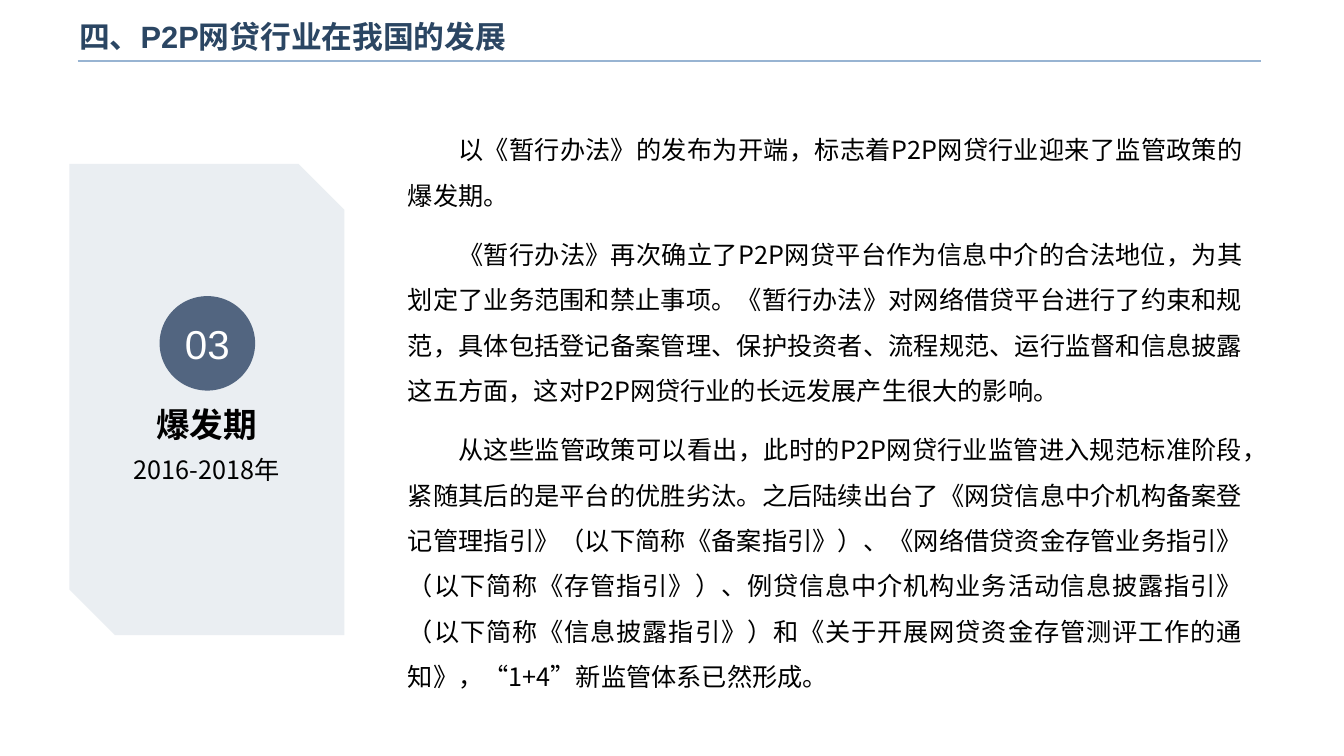
"""Build the slide on the boom period of P2P lending rules."""
from lxml.etree import SubElement
from pptx import Presentation
from pptx.dml.color import RGBColor
from pptx.enum.shapes import MSO_CONNECTOR, MSO_SHAPE
from pptx.enum.text import MSO_ANCHOR, PP_ALIGN
from pptx.oxml.ns import qn
from pptx.util import Pt

PX = 9525
NAVY = RGBColor(0x2B, 0x46, 0x63)
RULE = RGBColor(0x98, 0xB4, 0xD2)
PALE = RGBColor(0xEA, 0xEE, 0xF2)
SLATE = RGBColor(0x52, 0x65, 0x80)
BLACK = RGBColor(0, 0, 0)
WHITE = RGBColor(255, 255, 255)
LATIN = "Arial"
HAN = "Noto Sans CJK SC"

BODY = [
    "以《暂行办法》的发布为开端，标志着P2P网贷行业迎来了监管政策的爆发期。",
    "《暂行办法》再次确立了P2P网贷平台作为信息中介的合法地位，为其划定了业务范围和禁止事项。"
    "《暂行办法》对网络借贷平台进行了约束和规范，具体包括登记备案管理、保护投资者、流程规范、"
    "运行监督和信息披露这五方面，这对P2P网贷行业的长远发展产生很大的影响。",
    "从这些监管政策可以看出，此时的P2P网贷行业监管进入规范标准阶段，紧随其后的是平台的优胜劣汰。"
    "之后陆续出台了《网贷信息中介机构备案登记管理指引》（以下简称《备案指引》）、"
    "《网络借贷资金存管业务指引》（以下简称《存管指引》）、"
    "例贷信息中介机构业务活动信息披露指引》（以下简称《信息披露指引》）"
    "和《关于开展网贷资金存管测评工作的通知》，“1+4”新监管体系已然形成。",
]


def write(frame, *texts, size=18, font=HAN, color=BLACK, bold=False,
          align=PP_ALIGN.CENTER, anchor=MSO_ANCHOR.TOP, indent=0, line=None, after=0):
    frame.word_wrap = True
    frame.vertical_anchor = anchor
    for i, text in enumerate(texts):
        para = frame.paragraphs[0] if i == 0 else frame.add_paragraph()
        para.alignment = align
        para.line_spacing = line
        para.space_after = Pt(after)
        para._p.get_or_add_pPr().set("indent", str(indent * PX))
        run = para.add_run()
        run.text = text
        run.font.size = Pt(size)
        run.font.bold = bold
        run.font.name = font
        run.font.color.rgb = color
        SubElement(run._r.get_or_add_rPr(), qn("a:ea"), typeface=HAN)


def label(slide, box, *texts, **form):
    area = slide.shapes.add_textbox(*(n * PX for n in box))
    write(area.text_frame, *texts, **form)


def shape(slide, kind, box, fill):
    item = slide.shapes.add_shape(kind, *(n * PX for n in box))
    item.shadow.inherit = False
    item.fill.solid()
    item.fill.fore_color.rgb = fill
    item.line.fill.background()
    return item


def rule(slide, *ends):
    line = slide.shapes.add_connector(MSO_CONNECTOR.STRAIGHT, *(n * PX for n in ends))
    line.line.color.rgb = RULE
    line.line.width = Pt(1)
    SubElement(line._element.spPr, qn("a:effectLst"))


def main():
    deck = Presentation()
    deck.slide_width = 1280 * PX
    deck.slide_height = 720 * PX
    slide = deck.slides.add_slide(deck.slide_layouts[6])
    rule(slide, 74, 58, 1201, 58)
    label(slide, (66, 9, 1028, 51), "四、P2P网贷行业在我国的发展", size=22, font=LATIN,
          color=NAVY, bold=True, align=PP_ALIGN.LEFT, anchor=MSO_ANCHOR.MIDDLE)
    shape(slide, MSO_SHAPE.SNIP_2_DIAG_RECTANGLE, (66, 156, 262, 449), PALE)
    label(slide, (44, 380, 306, 48), "爆发期", size=24, bold=True)
    label(slide, (379, 109, 814, 560), *BODY, align=PP_ALIGN.JUSTIFY,
          indent=48, line=1.5, after=10)
    badge = shape(slide, MSO_SHAPE.OVAL, (152, 282, 91, 90), SLATE)
    write(badge.text_frame, "03", size=28.8, font=LATIN, color=WHITE, anchor=MSO_ANCHOR.MIDDLE)
    label(slide, (44, 428, 306, 38), "2016-2018年")
    deck.save("out.pptx")


if __name__ == "__main__":
    main()
